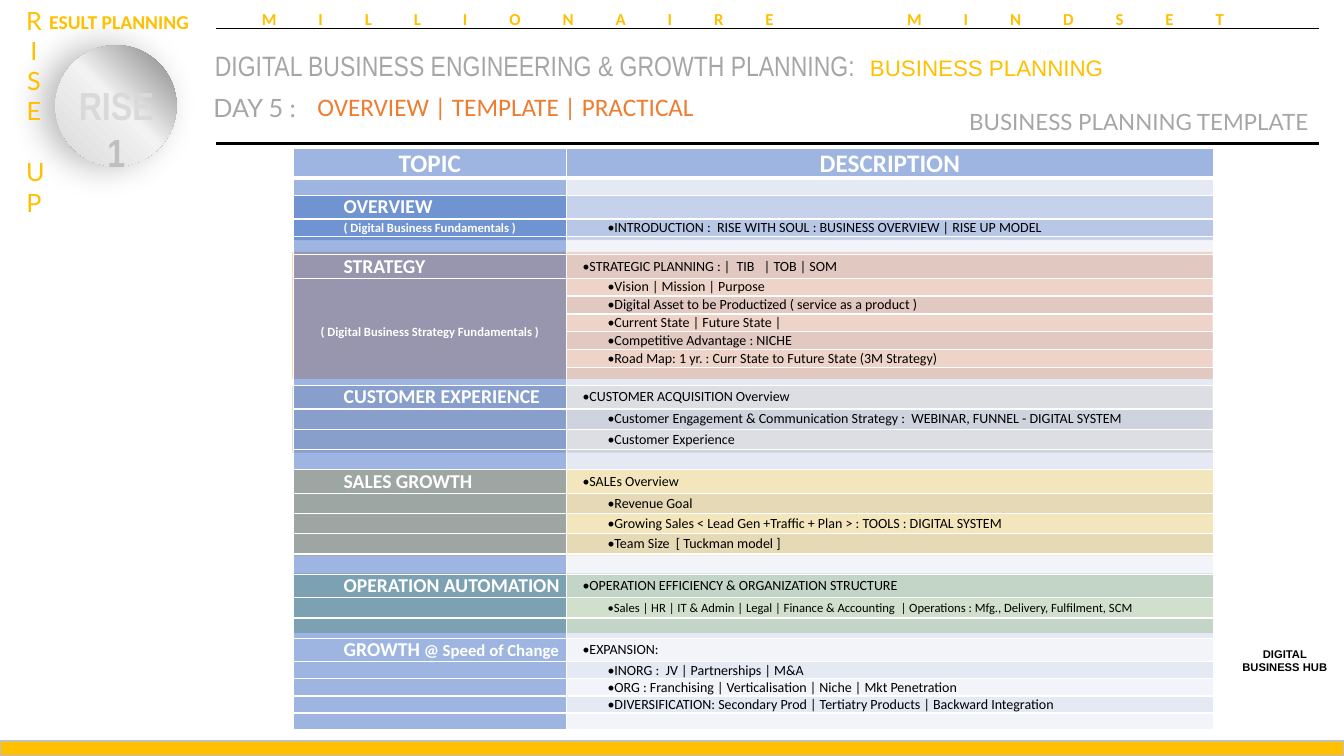
from dataclasses import dataclass
from lxml.etree import SubElement
from pptx import Presentation
from pptx.dml.color import RGBColor as Rgb
from pptx.enum.shapes import MSO_CONNECTOR as Conn, MSO_SHAPE as Kind
from pptx.enum.text import MSO_ANCHOR as Anchor, PP_ALIGN as Align
from pptx.oxml import parse_xml
from pptx.oxml.ns import nsdecls, qn
from pptx.util import Cm, Pt


@dataclass(frozen=True)
class Theme:
    gold: str = "FFC000"
    orange: str = "ED7D31"
    blue: str = "4472C4"
    gray: str = "A6A6A6"
    mid: str = "A5A5A5"
    edge: str = "BFBFBF"
    pale: str = "D9D9D9"
    green: str = "70AD47"
    band: tuple = ("E9EBF5", "CFD5EA")
    white: str = "FFFFFF"
    black: str = "000000"
    huge: int = 28
    big: int = 20
    head: int = 18
    sub: int = 16
    name: int = 14
    mini: int = 12
    body: int = 10
    note: int = 9
    tiny: int = 8


look = Theme()


def style(run, size, color, face="Calibri", bold=False):
    font = run.font
    font.size, font.name, font.bold = Pt(size), face, bold
    font.color.rgb = Rgb.from_string(color)


def tint(item, node, color, alpha=100):
    item.fill.solid()
    item.fill.fore_color.rgb = Rgb.from_string(color)
    if alpha < 100:
        for tag in node.iter(qn("a:srgbClr")):
            SubElement(tag, qn("a:alpha")).set("val", str(alpha * 1000))


SHADOW = (f'<a:effectLst {nsdecls("a")}><a:outerShdw blurRad="%d" dist="%d" dir="%d">'
          '<a:srgbClr val="000000"><a:alpha val="%d"/></a:srgbClr></a:outerShdw></a:effectLst>')

deck = Presentation()
deck.slide_width, deck.slide_height = Cm(33.87), Cm(19.05)
slide = deck.slides.add_slide(deck.slide_layouts[5])
shapes = slide.shapes

# Title
title = shapes.title
title.left, title.top, title.width, title.height = Cm(5.16), Cm(1.09), Cm(28.07), Cm(2.49)
frame = title.text_frame
frame.word_wrap, frame.vertical_anchor = True, Anchor.TOP
first, last = frame.paragraphs[0], frame.add_paragraph()
first.alignment, last.alignment = Align.LEFT, Align.RIGHT
last.space_before = Pt(19)
for para, text, size, color, face in [
    (first, "DIGITAL BUSINESS ENGINEERING & GROWTH PLANNING:\t", look.big, look.gray, "Arial Narrow"),
    (first, "BUSINESS PLANNING", look.sub, look.gold, "Arial"),
    (last, "BUSINESS PLANNING TEMPLATE", look.sub, look.gray, "Lato"),
]:
    run = para.add_run()
    run.text = text
    style(run, size, color, face)

# Footer bar and badge
bar = shapes.add_shape(Kind.RECTANGLE, 0, Cm(18.67), Cm(33.87), Cm(0.38))
bar.shadow.inherit = False
tint(bar, bar._element.spPr, look.gold)
bar.line.color.rgb, bar.line.width = Rgb.from_string(look.edge), Pt(1)

badge = shapes.add_shape(Kind.OVAL, Cm(1.4), Cm(1.14), Cm(3.05), Cm(3.05))
badge.line.fill.background()
stops = "".join(f'<a:gs pos="{pos}000"><a:srgbClr val="{color}"/></a:gs>'
                for pos, color in [(0, "808080"), (48, "F2F2F2"), (100, look.pale)])
props = badge._element.spPr
props.insert(2, parse_xml(f'<a:gradFill {nsdecls("a")}><a:gsLst>{stops}</a:gsLst>'
                          '<a:lin ang="8100000" scaled="0"/></a:gradFill>'))
props.append(parse_xml(SHADOW % (Pt(25), Pt(9), 10800000, 27000)))

# Labels: left, top, width, height, align, face, size, bold, paragraphs of runs
labels = [
    (1.52, 1.93, 2.82, 1.45, Align.CENTER, "Arial Narrow", look.huge, True,
     [[("RISE", look.pale), (" 1", look.edge)]]),
    (0.41, 0, 0.89, 5.64, Align.CENTER, "Lato", look.head, False,
     [[("RISE", look.gold)], [("UP", look.gold)]]),
    (0.99, 0.13, 4.3, 0.86, Align.LEFT, "Calibri", look.name, True,
     [[("ESULT PLANNING", look.gold)]]),
    (31.01, 16.18, 2.74, 2.87, Align.CENTER, "Arial", look.tiny, True,
     [[("DIGITAL BUSINESS HUB", look.black)]]),
    (4.6, 0.1, 28.27, 0.76, Align.CENTER, "Calibri", look.mini, True,
     [[("MILLIONAIRE  MINDSET", look.gold)]]),
    (5.13, 2.21, 3.25, 1.02, Align.LEFT, "Lato", look.head, False,
     [[("DAY 5 :", look.gray)]]),
    (7.75, 2.18, 15.98, 1.02, Align.LEFT, "Calibri", look.head, False,
     [[("OVERVIEW | TEMPLATE | PRACTICAL", look.orange)]]),
]
for left, top, width, height, align, face, size, bold, paras in labels:
    frame = shapes.add_textbox(Cm(left), Cm(top), Cm(width), Cm(height)).text_frame
    frame.word_wrap = True
    for i, runs in enumerate(paras):
        para = frame.add_paragraph() if i else frame.paragraphs[0]
        para.alignment = align
        if i:
            para.space_before = Pt(22)
        for text, color in runs:
            run = para.add_run()
            run.text = text
            style(run, size, color, face, bold)
            rpr = run.font._element
            if text.startswith("MILL"):
                rpr.set("spc", "3000")
            if text in ("RISE", "UP", "OVERVIEW | TEMPLATE | PRACTICAL") and size == look.head:
                rpr.insert(1, parse_xml(SHADOW % (Pt(4), Pt(3), 5400000, 40000)))

# Rules
for y, weight in [(3.61, 2.5), (0.71, 0.5)]:
    rule = shapes.add_connector(Conn.STRAIGHT, Cm(5.44), Cm(y), Cm(33.25), Cm(y))
    rule.line.color.rgb, rule.line.width = Rgb.from_string(look.black), Pt(weight)
    SubElement(rule._element.spPr, qn("a:effectLst"))

# Section tints behind the table
for left, top, height, color in [
    (7.39, 4.93, 1.12, look.blue), (7.37, 6.35, 3.2, look.orange), (7.37, 9.73, 1.68, look.mid),
    (7.39, 11.84, 2.16, look.gold), (7.39, 14.45, 1.5, look.green),
]:
    panel = shapes.add_shape(Kind.RECTANGLE, Cm(left), Cm(top), Cm(23.19), Cm(height))
    panel.shadow.inherit = False
    panel.line.fill.background()
    tint(panel, panel._element.spPr, color, 50)

# Sections: name, note, lead, points, row height
plan = [
    ("OVERVIEW", "( Digital Business Fundamentals )", "",
     ["INTRODUCTION :  RISE WITH SOUL : BUSINESS OVERVIEW | RISE UP MODEL"], 0.45),
    ("STRATEGY", "( Digital Business Strategy Fundamentals )", "STRATEGIC PLANNING : |  TIB   | TOB | SOM",
     ["Vision | Mission | Purpose", "Digital Asset to be Productized ( service as a product )",
      "Current State | Future State |", "Competitive Advantage : NICHE",
      "Road Map: 1 yr. : Curr State to Future State (3M Strategy)"], 0.45),
    ("CUSTOMER EXPERIENCE", "", "CUSTOMER ACQUISITION Overview",
     ["Customer Engagement & Communication Strategy :  WEBINAR, FUNNEL - DIGITAL SYSTEM",
      "Customer Experience"], 0.51),
    ("SALES GROWTH", "", "SALEs Overview",
     ["Revenue Goal", "Growing Sales < Lead Gen +Traffic + Plan > : TOOLS : DIGITAL SYSTEM",
      "Team Size  [ Tuckman model ]"], 0.51),
    ("OPERATION AUTOMATION", "", "OPERATION EFFICIENCY & ORGANIZATION STRUCTURE",
     ["Sales | HR | IT & Admin | Legal | Finance & Accounting  | Operations : Mfg., Delivery, Fulfilment, SCM"],
     0.51),
    ("GROWTH @ Speed of Change", "", "EXPANSION:",
     ["INORG :  JV | Partnerships | M&A", "ORG : Franchising | Verticalisation | Niche | Mkt Penetration",
      "DIVERSIFICATION: Secondary Prod | Tertiatry Products | Backward Integration"], 0.43),
]

# Table rows: height, then text, inset, size for each column; no inset means centred
blank = ("", 0, look.tiny)
rows = [(0.75, ("TOPIC", 0, look.head), ("DESCRIPTION", 0, look.head)), (0.43, blank, blank)]
for name, note, lead, points, pitch in plan:
    rows.append((0.59, (name, 1.27, look.name), (lead and "•" + lead, 0.41, look.body)))
    for i, point in enumerate(points + [""]):
        size = look.note if point.startswith("Sales |") else look.body
        rows.append((pitch, (note if i == 0 else "", 0, look.note), (point and "•" + point, 1.04, size)))

grid = shapes.add_table(len(rows), 2, Cm(7.39), Cm(3.73), Cm(23.19), Cm(14.58)).table
grid.first_row = grid.horz_banding = False
grid.columns[0].width, grid.columns[1].width = Cm(6.88), Cm(16.31)
for r, (height, *pair) in enumerate(rows):
    grid.rows[r].height = Cm(height)
    for c, (text, inset, size) in enumerate(pair):
        cell = grid.cell(r, c)
        cell.margin_left, cell.margin_right, cell.margin_top, cell.margin_bottom = Cm(inset), 0, 0, 0
        cell.vertical_anchor = Anchor.BOTTOM if size == look.name else Anchor.MIDDLE
        props = cell._tc.get_or_add_tcPr()
        tint(cell, props, look.blue if c == 0 or r == 0 else look.band[r % 2], 52)
        for i, side in enumerate("LRTB"):
            thick = 3 if (r, side) in ((0, "B"), (1, "T")) else 1
            props.insert(i, parse_xml(
                f'<a:ln{side} {nsdecls("a")} w="{Pt(thick)}"><a:solidFill>'
                f'<a:srgbClr val="{look.white}"/></a:solidFill></a:ln{side}>'))
        para = cell.text_frame.paragraphs[0]
        para.alignment = Align.LEFT if inset else Align.CENTER
        if not text:
            para._p.get_or_add_endParaRPr().set("sz", "600")
            continue
        main, mark, rest = text.partition(" @")
        for part, scale in [(main, size), (mark + rest, look.mini)]:
            if part:
                run = para.add_run()
                run.text = part
                strong = c == 0 or r == 0
                style(run, scale, look.white if strong else look.black, bold=strong)

# One tall cell for the strategy note
grid.cell(6, 0).merge(grid.cell(11, 0))

deck.save("out.pptx")
